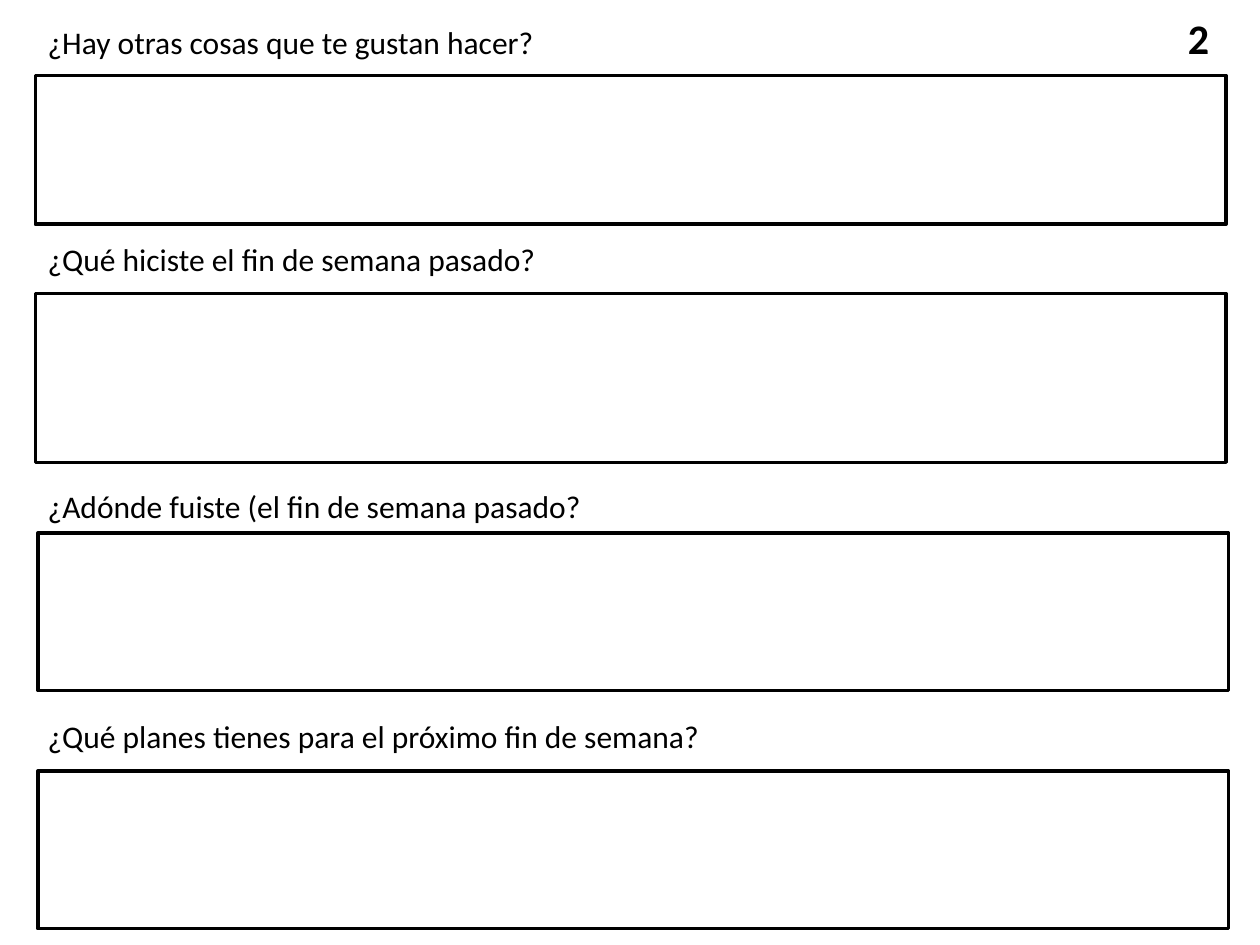
"""Build a Spanish worksheet slide with four questions and answer boxes."""
from pptx import Presentation
from pptx.dml.color import RGBColor
from pptx.enum.shapes import MSO_SHAPE
from pptx.enum.text import MSO_AUTO_SIZE
from pptx.util import Inches, Pt

BLACK = RGBColor(0x00, 0x00, 0x00)
FONT = "Calibri"
QUESTION_LEFT, QUESTION_HEIGHT = 0.28, 0.4
BOX_WIDTH = 9.45

# question, text top, text width, box left, box top, box height
QUESTIONS = [
    ("¿Hay otras cosas que te gustan hacer?", 0.13, 4.1, 0.28, 0.6, 1.18),
    ("¿Qué hiciste el fin de semana pasado?", 1.86, 4.13, 0.28, 2.33, 1.34),
    ("¿Adónde fuiste (el fin de semana pasado?", 3.82, 4.49, 0.3, 4.23, 1.25),
    ("¿Qué planes tienes para el próximo fin de semana?", 5.64, 5.44, 0.3, 6.12, 1.25),
]
PAGE_NUMBER = "2"


def add_text(s, text, left, top, width, height, size, bold=False, wrap=False):
    tb = s.shapes.add_textbox(Inches(left), Inches(top), Inches(width), Inches(height))
    tf = tb.text_frame
    tf.word_wrap = wrap
    tf.auto_size = MSO_AUTO_SIZE.SHAPE_TO_FIT_TEXT
    r = tf.paragraphs[0].add_run()
    r.text = text
    r.font.name = FONT
    r.font.size = Pt(size)
    r.font.bold = bold
    r.font.color.rgb = BLACK


def add_answer_box(s, left, top, height):
    sp = s.shapes.add_shape(MSO_SHAPE.RECTANGLE, Inches(left), Inches(top),
                            Inches(BOX_WIDTH), Inches(height))
    sp.shadow.inherit = False
    sp.fill.background()
    sp.line.color.rgb = BLACK
    sp.line.width = Pt(2)


def main():
    prs = Presentation()
    prs.slide_width, prs.slide_height = Inches(10), Inches(7.5)
    s = prs.slides.add_slide(prs.slide_layouts[6])
    for question, text_top, text_width, box_left, box_top, box_height in QUESTIONS:
        add_answer_box(s, box_left, box_top, box_height)
        add_text(s, question, QUESTION_LEFT, text_top, text_width, QUESTION_HEIGHT, 18)
    add_text(s, PAGE_NUMBER, 9.33, 0.05, 0.67, 0.5, 24, bold=True, wrap=True)
    prs.save("out.pptx")


if __name__ == "__main__":
    main()
